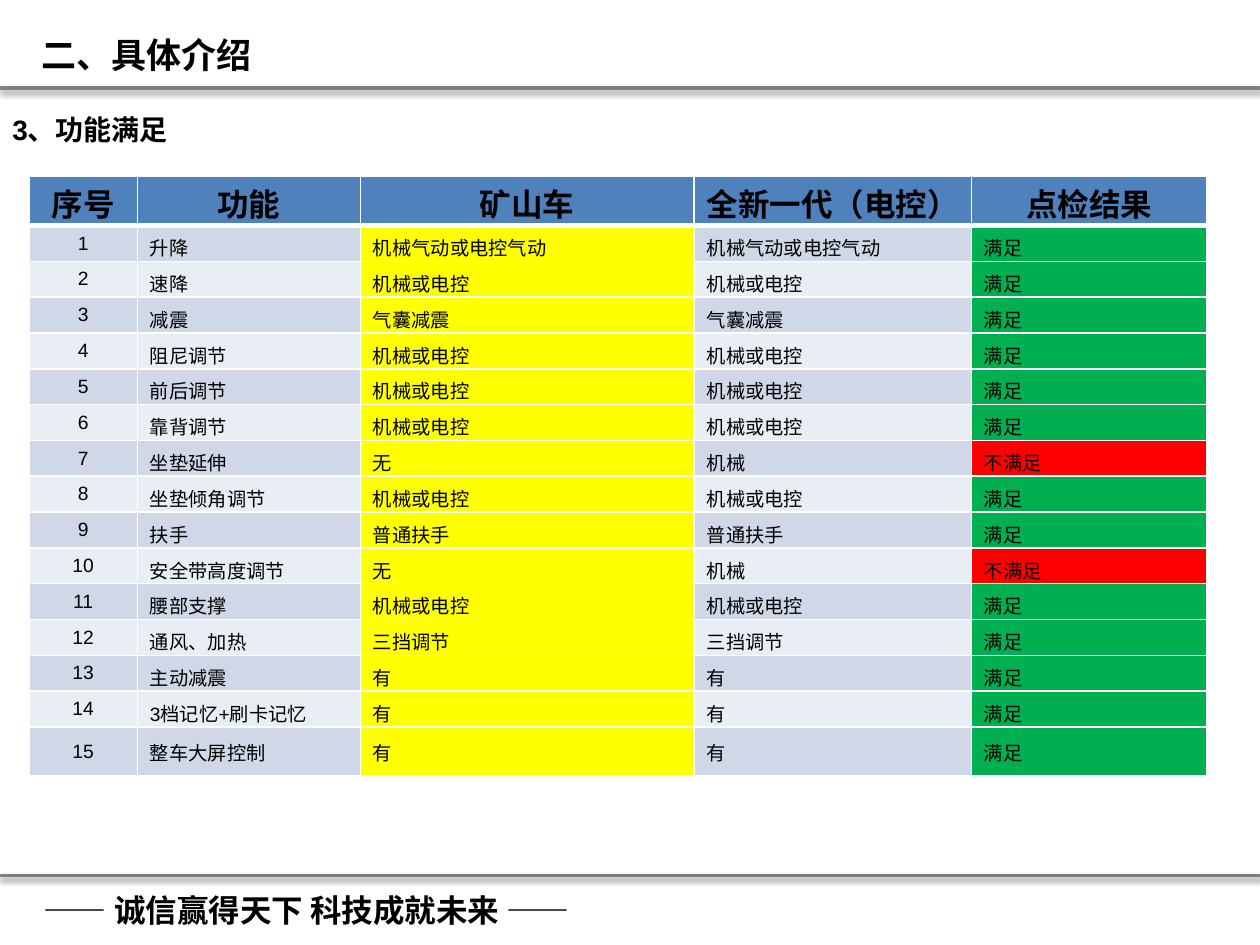
from dataclasses import dataclass

from lxml.etree import SubElement
from pptx import Presentation
from pptx.dml.color import RGBColor
from pptx.enum.shapes import MSO_CONNECTOR
from pptx.enum.text import MSO_ANCHOR, PP_ALIGN
from pptx.oxml.ns import qn
from pptx.util import Inches, Pt


@dataclass(frozen=True)
class Theme:
    ink: str = "000000"
    rule: str = "808080"
    edge: str = "FFFFFF"
    head: str = "4F81BD"
    odd: str = "D0D8E8"
    even: str = "E9EDF4"
    mine: str = "FFFF00"
    good: str = "00B050"
    bad: str = "FF0000"
    latin: str = "Arial"
    asian: str = "Noto Sans CJK SC"
    title: int = 20
    large: int = 18
    topic: int = 16
    small: int = 11


THEME = Theme()
PASS, FAIL = "满足", "不满足"
HEADS = ["序号", "功能", "矿山车", "全新一代（电控）", "点检结果"]
COLS = [0.86, 1.77, 2.65, 2.2, 1.87]
ITEMS = [
    ("升降", "机械气动或电控气动", "机械气动或电控气动", PASS),
    ("速降", "机械或电控", "机械或电控", PASS),
    ("减震", "气囊减震", "气囊减震", PASS),
    ("阻尼调节", "机械或电控", "机械或电控", PASS),
    ("前后调节", "机械或电控", "机械或电控", PASS),
    ("靠背调节", "机械或电控", "机械或电控", PASS),
    ("坐垫延伸", "无", "机械", FAIL),
    ("坐垫倾角调节", "机械或电控", "机械或电控", PASS),
    ("扶手", "普通扶手", "普通扶手", PASS),
    ("安全带高度调节", "无", "机械", FAIL),
    ("腰部支撑", "机械或电控", "机械或电控", PASS),
    ("通风、加热", "三挡调节", "三挡调节", PASS),
    ("主动减震", "有", "有", PASS),
    ("3档记忆+刷卡记忆", "有", "有", PASS),
    ("整车大屏控制", "有", "有", PASS),
]


def write(frame, text, size, bold=False, font=THEME.latin, align=PP_ALIGN.LEFT):
    para = frame.paragraphs[0]
    para.alignment = align
    run = para.add_run()
    run.text = text
    run.font.size = Pt(size)
    run.font.bold = bold
    run.font.name = font
    run.font.color.rgb = RGBColor.from_string(THEME.ink)
    SubElement(run.font._element, qn("a:ea"), typeface=THEME.asian)


def add_text(slide, box, text, size, **style):
    shape = slide.shapes.add_textbox(*map(Inches, box))
    frame = shape.text_frame
    frame.word_wrap = True
    frame.vertical_anchor = MSO_ANCHOR.MIDDLE
    write(frame, text, size, bold=True, **style)


def add_rule(slide, left, top, width):
    """Draw a grey line across the slide with a soft shadow below it."""
    line = slide.shapes.add_connector(
        MSO_CONNECTOR.STRAIGHT,
        Inches(left), Inches(top), Inches(left + width), Inches(top))
    line.line.color.rgb = RGBColor.from_string(THEME.rule)
    line.line.width = Pt(2)
    effects = SubElement(line._element.spPr, qn("a:effectLst"))
    shadow = SubElement(
        effects, qn("a:outerShdw"), blurRad=str(Pt(3.1)), dist=str(Pt(1.6)),
        dir="5400000", rotWithShape="0")
    color = SubElement(shadow, qn("a:srgbClr"), val=THEME.ink)
    SubElement(color, qn("a:alpha"), val="38000")


def add_edges(cell, base):
    """Give a cell white borders, the lower one base points wide."""
    props = cell._tc.get_or_add_tcPr()
    for side, width in (("L", 1), ("R", 1), ("T", 1), ("B", base)):
        line = SubElement(props, qn(f"a:ln{side}"), w=str(Pt(width)))
        fill = SubElement(line, qn("a:solidFill"))
        SubElement(fill, qn("a:srgbClr"), val=THEME.edge)


def fill_cell(cell, text, size, color, top, base, **style):
    cell.fill.solid()
    cell.fill.fore_color.rgb = RGBColor.from_string(color)
    cell.vertical_anchor = MSO_ANCHOR.MIDDLE
    cell.margin_top, cell.margin_bottom = Inches(top), Inches(base)
    write(cell.text_frame, text, size, **style)


def add_check(slide, left, top, width, height):
    """Place the feature check table; first and last rows are taller."""
    count = len(ITEMS) + 1
    table = slide.shapes.add_table(
        count, len(HEADS),
        Inches(left), Inches(top), Inches(width), Inches(height)).table
    for col, share in zip(table.columns, COLS):
        col.width = Inches(width * share / sum(COLS))
    tall = 0.39
    for row in table.rows:
        row.height = Inches((height - 2 * tall) / (count - 2))
    table.rows[0].height = table.rows[count - 1].height = Inches(tall)

    for cell, text in zip(table.rows[0].cells, HEADS):
        add_edges(cell, 3)
        fill_cell(cell, text, THEME.large, THEME.head, 0.03, 0,
                  bold=True, align=PP_ALIGN.CENTER)
    for num, item in enumerate(ITEMS, 1):
        band = THEME.odd if num % 2 else THEME.even
        mark = THEME.good if item[-1] == PASS else THEME.bad
        cells = table.rows[num].cells
        shift = 0.06 if num < len(ITEMS) else 0
        fill_cell(cells[0], str(num), THEME.small, band, 0, 0,
                  align=PP_ALIGN.CENTER)
        colors = [band, THEME.mine, band, mark]
        for col, (text, color) in enumerate(zip(item, colors), 1):
            fill_cell(cells[col], text, THEME.small, color, shift, 0)


def main():
    deck = Presentation()
    deck.slide_width, deck.slide_height = Inches(10), Inches(7.5)
    slide = deck.slides.add_slide(deck.slide_layouts[6])
    for top in (0.7, 6.95):
        add_rule(slide, 0, top, 10)
    add_text(slide, (0.25, 7.02, 5.3, 0.4),
             "—— 诚信赢得天下 科技成就未来 ——", THEME.large)
    add_text(slide, (0.23, 0.21, 6.97, 0.44), "二、具体介绍",
             THEME.title, font=THEME.asian)
    add_text(slide, (0, 0.84, 9.53, 0.37), "3、功能满足", THEME.topic)
    add_check(slide, 0.23, 1.4, 9.35, 4.76)
    deck.save("out.pptx")


if __name__ == "__main__":
    main()
